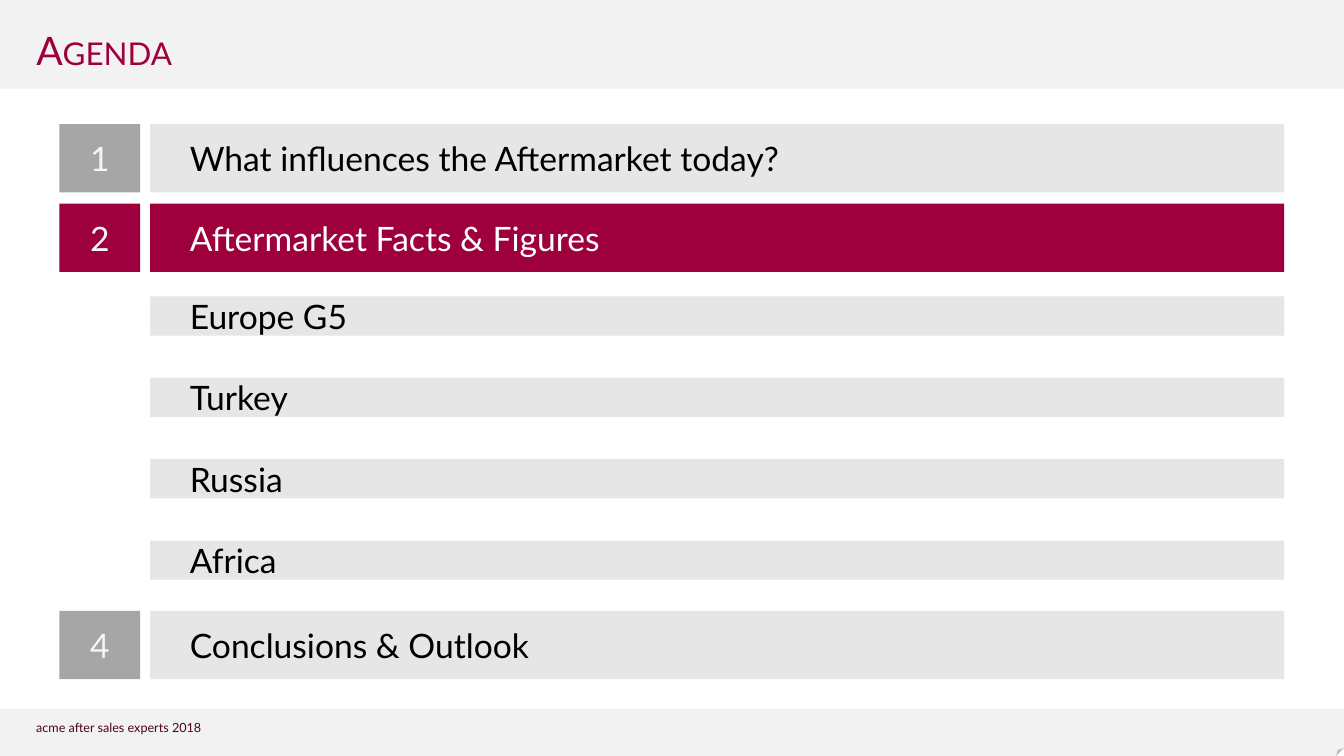
from pptx import Presentation
from pptx.dml.color import RGBColor
from pptx.enum.shapes import MSO_SHAPE
from pptx.enum.text import MSO_ANCHOR, PP_ALIGN
from pptx.util import Pt

TITLE = "Agenda"
FOOT = "acme after sales experts 2018"
RED, PALE, GREY, DARK = "9D003C", "E6E6E6", "A6A6A6", "F2F2F2"

# number, text, top, number fill, bar fill, text colour
MAIN = [
    ("1", "What influences the Aftermarket today?", 88.6, GREY, PALE, "000000"),
    ("2", "Aftermarket Facts & Figures", 145.5, RED, RED, "FFFFFF"),
    ("4", "Conclusions & Outlook", 436.4, GREY, PALE, "000000"),
]
SUBS = ["Europe G5", "Turkey", "Russia", "Africa"]

WIDE, HIGH = 960, 540
NUM_X, NUM_W = 42.4, 57.8
BAR_X, BAR_W = 107.2, 810
ROW_H, SUB_H = 48.8, 28
SUB_TOP, SUB_STEP = 211.8, 58.1
NUM_PAD = (7.2, 3.6, 7.2, 3.6)
BAR_PAD = (28.4, 10, 22, 10)


def color(code):
    return RGBColor.from_string(code)


def write(frame, text, size, code, align=PP_ALIGN.LEFT):
    para = frame.paragraphs[0]
    para.alignment = align
    run = para.add_run()
    run.text = text
    run.font.name = "Lato"
    run.font.size = Pt(size)
    run.font.color.rgb = color(code)
    return run


def box(slide, x, y, w, h, fill, kind=MSO_SHAPE.RECTANGLE):
    shape = slide.shapes.add_shape(kind, Pt(x), Pt(y), Pt(w), Pt(h))
    shape.shadow.inherit = False
    shape.fill.solid()
    shape.fill.fore_color.rgb = color(fill)
    shape.line.fill.background()
    return shape


def label(shape, text, code, pad, align=PP_ALIGN.LEFT):
    frame = shape.text_frame
    frame.word_wrap = True
    frame.vertical_anchor = MSO_ANCHOR.MIDDLE
    (frame.margin_left, frame.margin_top,
     frame.margin_right, frame.margin_bottom) = map(Pt, pad)
    write(frame, text, 24, code, align)


def bar(slide, text, top, high, fill, code):
    label(box(slide, BAR_X, top, BAR_W, high, fill), text, code, BAR_PAD)


def main():
    deck = Presentation()
    deck.slide_width, deck.slide_height = Pt(WIDE), Pt(HIGH)
    slide = deck.slides.add_slide(deck.slide_layouts[5])

    title = slide.shapes.title
    band = box(slide, 0, 0, WIDE, 63.4, DARK)
    title._element.addprevious(band._element)
    box(slide, 0, 506.4, WIDE, HIGH - 506.4, DARK, MSO_SHAPE.FOLDED_CORNER)

    title.left, title.top, title.width, title.height = map(Pt, (18.7, 6.5, 864, 49.7))
    title.text_frame.vertical_anchor = MSO_ANCHOR.BOTTOM
    run = write(title.text_frame, TITLE, 28, RED)
    run.font._element.set("cap", "small")

    foot = slide.shapes.add_textbox(Pt(18.7), Pt(510.5), Pt(353), Pt(18))
    foot.text_frame.word_wrap = True
    write(foot.text_frame, FOOT, 9, "4E001E")

    for num, text, top, mark, fill, code in MAIN:
        tile = box(slide, NUM_X, top, NUM_W, ROW_H, mark)
        label(tile, num, "F3F6F7", NUM_PAD, PP_ALIGN.CENTER)
        bar(slide, text, top, ROW_H, fill, code)
    for i, text in enumerate(SUBS):
        bar(slide, text, SUB_TOP + i * SUB_STEP, SUB_H, PALE, "000000")

    deck.save("out.pptx")


if __name__ == "__main__":
    main()
